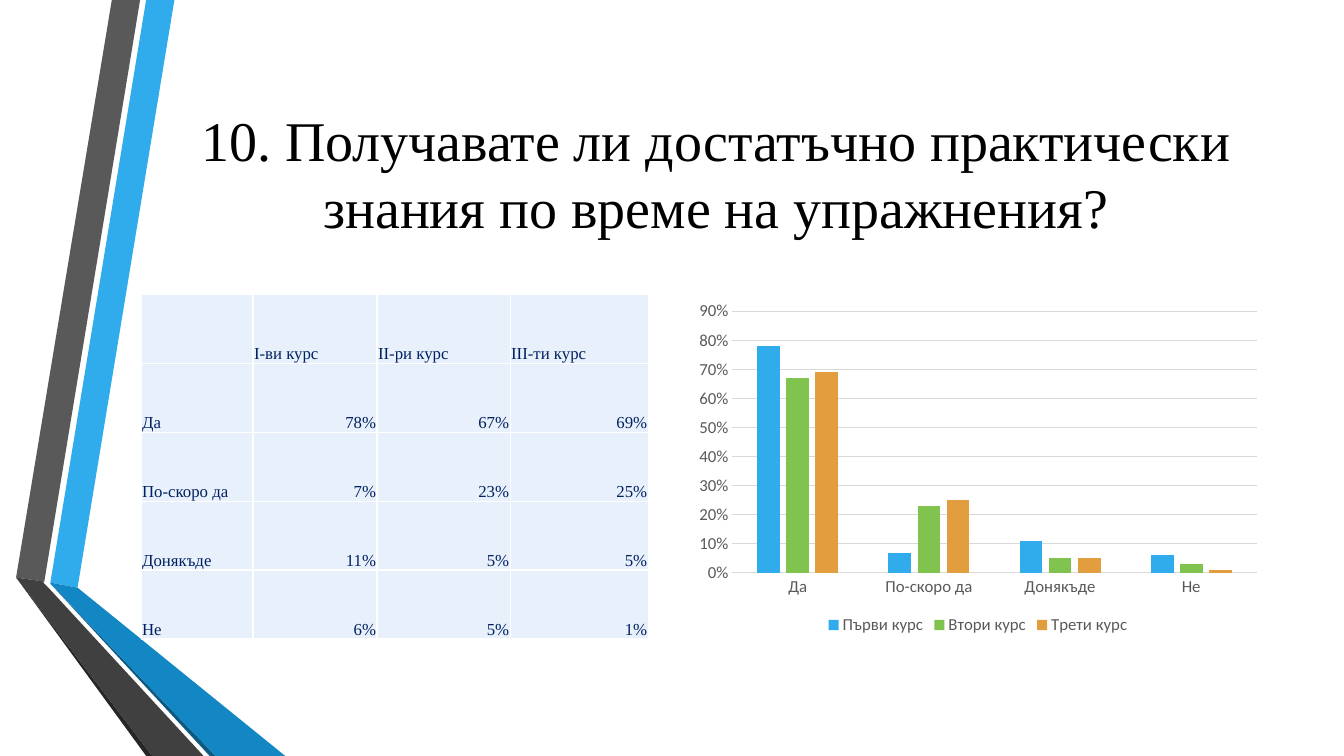
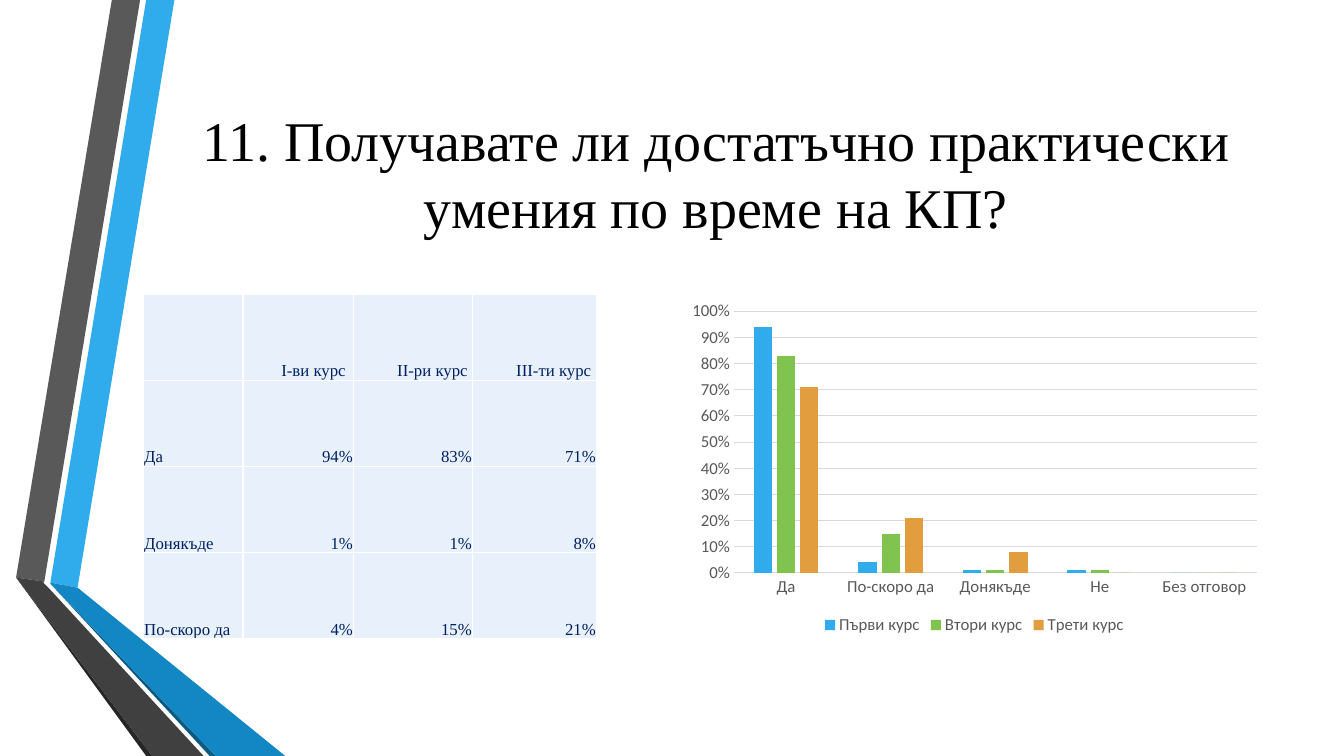
from pptx import Presentation
from pptx.chart.data import CategoryChartData
from pptx.dml.color import RGBColor
from pptx.enum.chart import XL_CHART_TYPE, XL_LEGEND_POSITION, XL_TICK_MARK
from pptx.enum.text import MSO_ANCHOR, PP_ALIGN
from pptx.oxml import parse_xml
from pptx.oxml.ns import nsdecls
from pptx.util import Pt

PX = 9144  # 100 px to the inch
COLUMN_CLUSTERED = XL_CHART_TYPE.COLUMN_CLUSTERED
LEGEND_BOTTOM = XL_LEGEND_POSITION.BOTTOM
NO_TICK = XL_TICK_MARK.NONE
MIDDLE, BOTTOM = MSO_ANCHOR.MIDDLE, MSO_ANCHOR.BOTTOM
LEFT, CENTER, RIGHT = PP_ALIGN.LEFT, PP_ALIGN.CENTER, PP_ALIGN.RIGHT

TITLE_FONT, CHART_FONT = "Times New Roman", "Calibri"
COLORS = {
    "title": "000000", "cell": "E8F1FB", "cell_text": "002060", "border": "FFFFFF",
    "chart_text": "595959", "grid": "D9D9D9",
    "blue": "30ACEC", "green": "80C34F", "orange": "E29D3E",
    "blue_fold": "1287C3", "blue_edge": "0C5A82",
    "gray": "595959", "gray_fold": "404040", "gray_edge": "262626",
}

RIBBONS = [
    ("blue", [(50, 578), (77, 583), (173, 0), (145, 0)]),
    ("gray", [(139, 0), (111, 0), (16, 573), (44, 577)]),
    ("gray_edge", [(16, 573), (145, 750), (151, 750)]),
    ("blue_edge", [(50, 579), (208, 750), (214, 750)]),
    ("blue_fold", [(50, 579), (214, 750), (283, 750), (77, 583), (50, 578)]),
    ("gray_fold", [(202, 750), (48, 583), (43, 578), (44, 577), (16, 573), (151, 750)]),
]

CONTENT_TOP, CONTENT_HEIGHT, CONTENT_RIGHT = 292, 342, 1258
SERIES = [("Първи курс", "blue"), ("Втори курс", "green"), ("Трети курс", "orange")]
HEADER = ["", "I-ви курс", "II-ри курс", "III-ти курс"]

QUESTIONS = [
    {
        "title": "10. Получавате ли достатъчно практически знания по време на упражнения?",
        "table_left": 140,
        "columns": [111, 123, 132, 137],
        "header_insets": [1, 1, 1, 1],
        "rows": [
            ["Да", "78%", "67%", "69%"],
            ["По-скоро да", "7%", "23%", "25%"],
            ["Донякъде", "11%", "5%", "5%"],
            ["Не", "6%", "5%", "1%"],
        ],
        "chart_left": 682,
        "axis_maximum": 0.9,
        "categories": ["Да", "По-скоро да", "Донякъде", "Не"],
        "values": [(0.78, 0.07, 0.11, 0.06), (0.67, 0.23, 0.05, 0.03), (0.69, 0.25, 0.05, 0.01)],
    },
    {
        "title": "11. Получавате ли достатъчно практически умения по време на КП?",
        "table_left": 142,
        "columns": [99, 110, 118, 123],
        "header_insets": [1, 38, 43, 43],
        "rows": [
            ["Да", "94%", "83%", "71%"],
            ["Донякъде", "1%", "1%", "8%"],
            ["По-скоро да", "4%", "15%", "21%"],
        ],
        "chart_left": 675,
        "axis_maximum": 1,
        "categories": ["Да", "По-скоро да", "Донякъде", "Не", "Без отговор"],
        "values": [(0.94, 0.04, 0.01, 0.01, 0), (0.83, 0.15, 0.01, 0.01, 0), (0.71, 0.21, 0.08, 0, 0)],
    },
]


def style_font(font, name, size, color):
    font.name = name
    font.size = Pt(size)
    font.color.rgb = RGBColor.from_string(COLORS[color])


def style_cell(cell, left_inset):
    """Give a cell its white borders, pale fill and narrow insets."""
    properties = cell._tc.get_or_add_tcPr()
    for side in ("lnL", "lnR", "lnT", "lnB"):
        properties.append(parse_xml(
            f'<a:{side} {nsdecls("a")} w="12700"><a:solidFill>'
            f'<a:srgbClr val="{COLORS["border"]}"/></a:solidFill></a:{side}>'))
    cell.fill.solid()
    cell.fill.fore_color.rgb = RGBColor.from_string(COLORS["cell"])
    cell.margin_left = left_inset * PX
    cell.margin_right = cell.margin_top = PX
    cell.margin_bottom = 0
    cell.vertical_anchor = BOTTOM


presentation = Presentation()
presentation.slide_width = 1333 * PX
presentation.slide_height = 750 * PX

for question in QUESTIONS:
    slide = presentation.slides.add_slide(presentation.slide_layouts[6])

    for color, points in RIBBONS:
        builder = slide.shapes.build_freeform(*points[0], scale=PX)
        builder.add_line_segments(points[1:], close=True)
        ribbon = builder.convert_to_shape()
        ribbon.shadow.inherit = False
        ribbon.fill.solid()
        ribbon.fill.fore_color.rgb = RGBColor.from_string(COLORS[color])
        ribbon.line.fill.background()

    title = slide.shapes.add_textbox(162 * PX, 75 * PX, 1096 * PX, 192 * PX)
    text_frame = title.text_frame
    text_frame.word_wrap = True
    text_frame.vertical_anchor = MIDDLE
    text_frame.text = question["title"]
    paragraph = text_frame.paragraphs[0]
    paragraph.alignment = CENTER
    style_font(paragraph.runs[0].font, TITLE_FONT, 40, "title")

    rows = [HEADER] + question["rows"]
    table = slide.shapes.add_table(
        len(rows), len(HEADER), question["table_left"] * PX, CONTENT_TOP * PX,
        sum(question["columns"]) * PX, CONTENT_HEIGHT * PX).table
    table.first_row = table.horz_banding = False
    for column, width in zip(table.columns, question["columns"]):
        column.width = width * PX
    for row_index, row in enumerate(rows):
        for column_index, text in enumerate(row):
            cell = table.cell(row_index, column_index)
            is_header = row_index == 0
            style_cell(cell, question["header_insets"][column_index] if is_header else 1)
            cell.text_frame.text = text
            paragraph = cell.text_frame.paragraphs[0]
            paragraph.alignment = LEFT if is_header or column_index == 0 else RIGHT
            for run in paragraph.runs:
                style_font(run.font, TITLE_FONT, 12, "cell_text")

    chart_data = CategoryChartData(number_format="0%")
    chart_data.categories = question["categories"]
    for (name, _), values in zip(SERIES, question["values"]):
        chart_data.add_series(name, values)
    chart_left = question["chart_left"]
    chart = slide.shapes.add_chart(
        COLUMN_CLUSTERED, chart_left * PX, CONTENT_TOP * PX,
        (CONTENT_RIGHT - chart_left) * PX, CONTENT_HEIGHT * PX, chart_data).chart
    style_font(chart.font, CHART_FONT, 12, "chart_text")
    chart.has_title = False
    chart.has_legend = True
    chart.legend.position = LEGEND_BOTTOM
    chart.legend.include_in_layout = False
    style_font(chart.legend.font, CHART_FONT, 12, "chart_text")

    plot = chart.plots[0]
    plot.gap_width = 219
    plot.overlap = -27
    plot.vary_by_categories = False
    for series, (_, color) in zip(plot.series, SERIES):
        series.format.fill.solid()
        series.format.fill.fore_color.rgb = RGBColor.from_string(COLORS[color])

    category_axis, value_axis = chart.category_axis, chart.value_axis
    for axis in (category_axis, value_axis):
        axis.major_tick_mark = axis.minor_tick_mark = NO_TICK
        style_font(axis.tick_labels.font, CHART_FONT, 12, "chart_text")
    value_axis.minimum_scale = 0
    value_axis.maximum_scale = question["axis_maximum"]
    value_axis.major_unit = 0.1
    value_axis.tick_labels.number_format = "0%"
    value_axis.tick_labels.number_format_is_linked = False
    value_axis.format.line.fill.background()
    for line in (category_axis.format.line, value_axis.major_gridlines.format.line):
        line.width = Pt(0.75)
        line.color.rgb = RGBColor.from_string(COLORS["grid"])

presentation.save("out.pptx")
